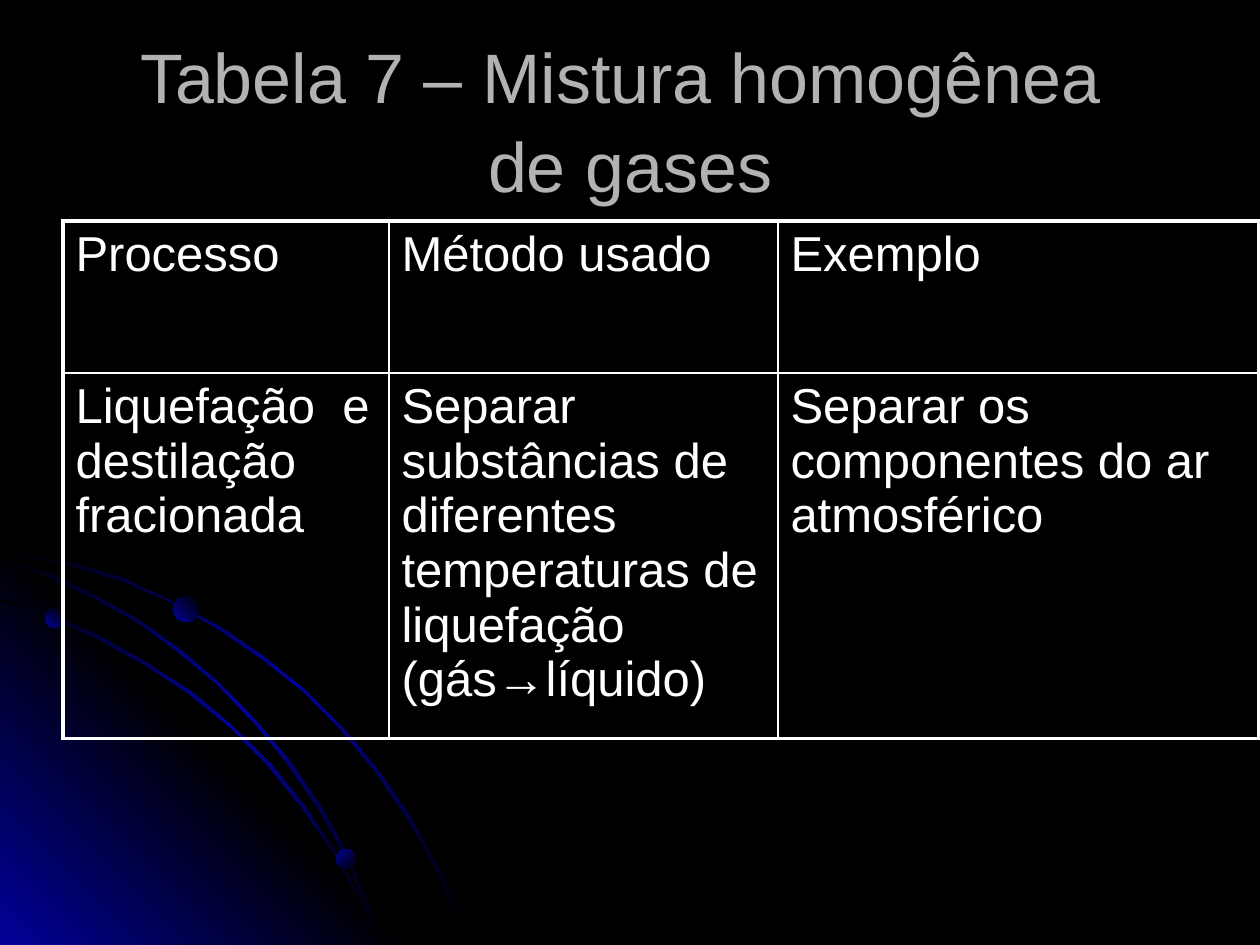
from pptx import Presentation
from pptx.dml.color import RGBColor
from pptx.enum.shapes import MSO_SHAPE
from pptx.enum.text import MSO_ANCHOR, PP_ALIGN
from pptx.oxml import parse_xml
from pptx.oxml.ns import nsdecls
from pptx.util import Pt

PX = 914400 / 126
OVAL = MSO_SHAPE.OVAL
MIDDLE = MSO_ANCHOR.MIDDLE
LEFT, CENTER = PP_ALIGN.LEFT, PP_ALIGN.CENTER
BLACK = RGBColor(0x00, 0x00, 0x00)
BLUE = RGBColor(0x01, 0x01, 0x99)
GRAY = RGBColor(0xB2, 0xB2, 0xB2)
WHITE = RGBColor(0xFF, 0xFF, 0xFF)

TITLE = "Tabela 7 – Mistura homogênea \vde gases"
ROWS = [
    ["Processo", "Método usado", "Exemplo"],
    ["Liquefação  e destilação fracionada",
     "Separar substâncias de diferentes temperaturas de liquefação (gás→líquido)",
     "Separar os componentes do ar atmosférico"],
]
WIDTHS = [326, 389, 481]
HEIGHTS = [152, 339]

GLOW = [BLACK, BLUE, BLACK]
FADE = [BLUE, BLACK]
CORNER = [(406, 945), (0, 945), (0, 538)]
OUTER = [
    (72, 563), (35, 556), (0, 548), (0, 552), (35, 558), (71, 566),
    (122, 581), (170, 602), (218, 629), (262, 659), (304, 692), (341, 730),
    (375, 771), (407, 818), (425, 848), (441, 879), (454, 911), (466, 944),
    (469, 944), (456, 911), (444, 879), (427, 848), (410, 816), (378, 770),
    (343, 728), (305, 690), (263, 656), (219, 626), (171, 601), (123, 578),
]
INNER = [
    (359, 900), (370, 922), (379, 944), (382, 944), (373, 920), (360, 897),
    (335, 852), (305, 806), (271, 764), (232, 726), (192, 692), (147, 663),
    (100, 636), (52, 615), (0, 598), (0, 601), (49, 617), (97, 639),
    (145, 665), (189, 694), (231, 728), (268, 766), (302, 808), (334, 853),
]
MIDARC = [
    (0, 557), (0, 559), (45, 576), (93, 598), (137, 622), (179, 653),
    (218, 685), (255, 724), (286, 762), (318, 808), (336, 840), (353, 874),
    (368, 910), (379, 944), (382, 944), (370, 907), (355, 873), (339, 838),
    (320, 805), (289, 760), (257, 722), (220, 684), (181, 650), (140, 621),
    (96, 596), (49, 573),
]
CURVES = [
    (OUTER, GLOW, 45),
    (CORNER, [BLUE, BLACK, BLUE], 315),
    (INNER, GLOW, 45),
    (MIDARC, GLOW, 45),
]
BALLS = [(45, 609, 19, 315), (336, 849, 20, 45), (173, 596, 26, 315)]


def emu(*sizes):
    return [round(size * PX) for size in sizes]


def write(frame, text, size, color, align=LEFT, spacing=None):
    frame.word_wrap = True
    para = frame.paragraphs[0]
    para.text = text
    para.alignment = align
    para.line_spacing = spacing
    para.font.size = Pt(size)
    para.font.name = "Arial"
    para.font.color.rgb = color
    for run in para.runs:
        run.font.size = Pt(size)
        run.font.name = "Arial"
        run.font.color.rgb = color


def shade(shape, colors, angle):
    shape.shadow.inherit = False
    shape.line.fill.background()
    shape.fill.background()
    step = 100000 // (len(colors) - 1)
    stops = "".join(
        f'<a:gs pos="{i * step}"><a:srgbClr val="{color}"/></a:gs>'
        for i, color in enumerate(colors))
    grad = parse_xml(
        f'<a:gradFill {nsdecls("a")} rotWithShape="1"><a:gsLst>{stops}</a:gsLst>'
        f'<a:lin ang="{angle * 60000}" scaled="0"/></a:gradFill>')
    props = shape._element.spPr
    props.replace(props.find("{*}noFill"), grad)


def border(cell, sides):
    props = cell._tc.get_or_add_tcPr()
    for i, (side, width) in enumerate(sides):
        props.insert(i, parse_xml(
            f'<a:ln{side} {nsdecls("a")} w="{Pt(width)}"><a:solidFill>'
            f'<a:srgbClr val="{WHITE}"/></a:solidFill></a:ln{side}>'))


def edge(outer):
    return 2.25 if outer else 1


def main():
    deck = Presentation()
    deck.slide_width, deck.slide_height = emu(1260, 945)
    slide = deck.slides.add_slide(deck.slide_layouts[6])
    slide.background.fill.solid()
    slide.background.fill.fore_color.rgb = BLACK
    shapes = slide.shapes

    for points, colors, angle in CURVES:
        path = shapes.build_freeform(*points[0], scale=PX)
        path.add_line_segments(points[1:], close=True)
        shade(path.convert_to_shape(), colors, angle)
    for left, top, size, angle in BALLS:
        shade(shapes.add_shape(OVAL, *emu(left, top, size, size)), FADE, angle)

    title = shapes.add_textbox(*emu(63, 38, 1134, 158)).text_frame
    title.vertical_anchor = MIDDLE
    write(title, TITLE, 40, GRAY, align=CENTER, spacing=1.07)

    table = shapes.add_table(
        len(ROWS), len(WIDTHS),
        *emu(63, 221, sum(WIDTHS), sum(HEIGHTS))).table
    table.first_row = table.horz_banding = False
    for col, width in zip(table.columns, emu(*WIDTHS)):
        col.width = width
    for row, height in zip(table.rows, emu(*HEIGHTS)):
        row.height = height
    for r, texts in enumerate(ROWS):
        for c, text in enumerate(texts):
            cell = table.cell(r, c)
            write(cell.text_frame, text, 28, WHITE)
            cell.fill.background()
            border(cell, [
                ("L", edge(c == 0)), ("R", edge(c == len(WIDTHS) - 1)),
                ("T", edge(r == 0)), ("B", edge(r == len(ROWS) - 1))])

    deck.save("out.pptx")


if __name__ == "__main__":
    main()
